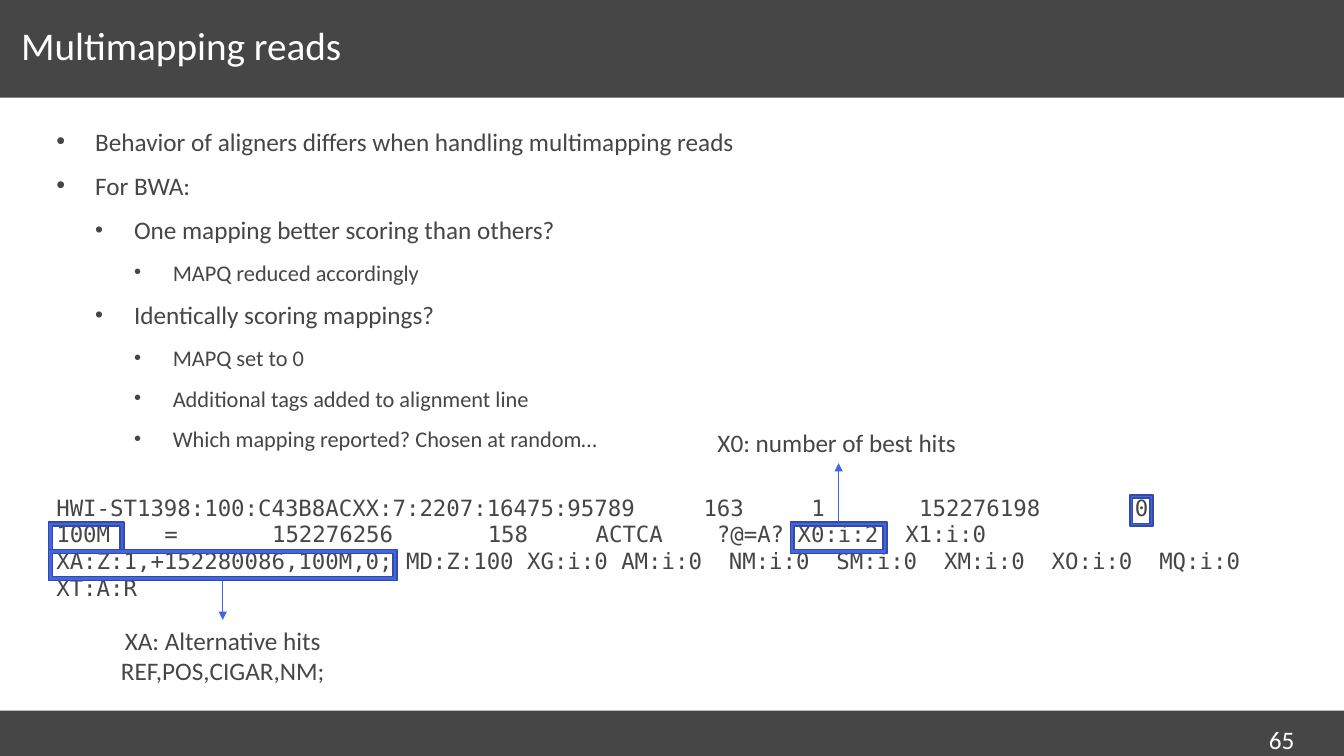
from lxml import etree
from pptx import Presentation
from pptx.dml.color import RGBColor
from pptx.enum.shapes import MSO_CONNECTOR, MSO_SHAPE
from pptx.enum.text import MSO_ANCHOR, PP_ALIGN
from pptx.oxml.ns import qn
from pptx.util import Pt

RECT, FRAME = MSO_SHAPE.RECTANGLE, MSO_SHAPE.FRAME
STRAIGHT = MSO_CONNECTOR.STRAIGHT
LEFT, CENTER = PP_ALIGN.LEFT, PP_ALIGN.CENTER
MIDDLE = MSO_ANCHOR.MIDDLE
GREY = RGBColor(0x46, 0x46, 0x46)
WHITE = RGBColor(0xFF, 0xFF, 0xFF)
BLUE = RGBColor(0x43, 0x65, 0xE2)
DARK_BLUE = RGBColor(0x32, 0x4B, 0xA7)
SANS, MONO = "Calibri", "DejaVu Sans Mono"
TOP, BOTTOM = 0, 2

prs = Presentation()
prs.slide_width, prs.slide_height = Pt(960), Pt(540)
s = prs.slides.add_slide(prs.slide_layouts[5])


def add_run(p, text, size=18, color=GREY, name=SANS):
    r = p.add_run()
    r.text = text
    r.font.color.rgb = color
    for key, value in {"size": Pt(size), "name": name}.items():
        setattr(r.font, key, value)


def add_label(box, lines, align=LEFT, color=GREY):
    sp = s.shapes.add_textbox(*map(Pt, box))
    tf = sp.text_frame
    tf.word_wrap = True
    for i, line in enumerate(lines):
        p = tf.paragraphs[0] if i == 0 else tf.add_paragraph()
        p.alignment = align
        add_run(p, line, color=color)
    return sp


# Header and footer bands, behind the title
for top, height in ((507.6, 32.4), (0, 69.84)):
    sp = s.shapes.add_shape(RECT, 0, Pt(top), prs.slide_width, Pt(height))
    sp.shadow.inherit = False
    sp.fill.solid()
    sp.fill.fore_color.rgb = GREY
    sp.line.fill.background()
    s.shapes._spTree.insert(2, sp._element)

# Title
title = s.shapes.title
for key, value in {"left": 15.12, "top": 12.24, "width": 829.44, "height": 46.08}.items():
    setattr(title, key, Pt(value))
tf = title.text_frame
tf.margin_left = tf.margin_right = 0
tf.vertical_anchor = MIDDLE
p = tf.paragraphs[0]
p.alignment = LEFT
p.line_spacing = 0.8
add_run(p, "Multimapping reads", 28, WHITE)

# Bullets: level and text
BULLETS = [
    (0, "Behavior of aligners differs when handling multimapping reads"),
    (0, "For BWA:"),
    (1, "One mapping better scoring than others?"),
    (2, "MAPQ reduced accordingly"),
    (1, "Identically scoring mappings?"),
    (2, "MAPQ set to 0"),
    (2, "Additional tags added to alignment line"),
    (2, "Which mapping reported? Chosen at random…"),
]
INDENT = 27.72
body = s.shapes.add_textbox(Pt(40.32), Pt(86.4), Pt(878.4), Pt(408.24))
tf = body.text_frame
tf.word_wrap = True
tf.margin_left = tf.margin_right = 0
for i, (level, text) in enumerate(BULLETS):
    p = tf.paragraphs[0] if i == 0 else tf.add_paragraph()
    p.level = level
    p.space_before, p.space_after = Pt(6 if i else 0), Pt(4)
    pPr = p._p.get_or_add_pPr()
    pPr.set("marL", str(Pt(INDENT * (level + 1))))
    pPr.set("indent", str(-Pt(INDENT)))
    clr = etree.SubElement(pPr, qn("a:buClr"))
    etree.SubElement(clr, qn("a:srgbClr"), val=str(GREY))
    etree.SubElement(pPr, qn("a:buSzPct"), val="90000" if level else "100000")
    etree.SubElement(pPr, qn("a:buFont"), typeface="Arial")
    etree.SubElement(pPr, qn("a:buChar"), char="•")
    add_run(p, text, 16 if level == 2 else 18)

# Alignment record, with a tab stop every eight characters
RECORD = (
    "HWI-ST1398:100:C43B8ACXX:7:2207:16475:95789\t163\t1\t152276198\t0\t"
    "100M\t=\t152276256\t158\tACTCA\t ?@=A? X0:i:2  X1:i:0  "
    "XA:Z:1,+152280086,100M,0; MD:Z:100 XG:i:0 AM:i:0  NM:i:0  SM:i:0  "
    "XM:i:0  XO:i:0  MQ:i:0  XT:A:R"
)
TAB = 8 * 9.63
p = tf.add_paragraph()
p.space_before, p.space_after = Pt(25.5), Pt(4)
tabs = etree.SubElement(p._p.get_or_add_pPr(), qn("a:tabLst"))
for n in range(1, 12):
    etree.SubElement(tabs, qn("a:tab"), pos=str(Pt(TAB * n)), algn="l")
add_run(p, RECORD, 16, name=MONO)

# Slide number
add_label((899.28, 514.08, 50.4, 18), ["65"], color=WHITE)

# Frames around the fields
FRAMES = {
    "MAPQ": (807.12, 353.52, 16.56),
    "CIGAR": (34.56, 372.96, 54),
    "X0": (564.48, 372.96, 69.12),
    "XA": (34.56, 392.4, 249.12),
}
frames = {}
for field, (left, top, width) in FRAMES.items():
    sp = s.shapes.add_shape(FRAME, Pt(left), Pt(top), Pt(width), Pt(22.32))
    sp.shadow.inherit = False
    sp.fill.solid()
    sp.fill.fore_color.rgb = BLUE
    sp.line.color.rgb = DARK_BLUE
    sp.line.width = Pt(1)
    frames[field] = sp

# Explanations, joined to their frames by arrows
x0_label = add_label((505.44, 301.68, 187.2, 29.08), ["X0: number of best hits"])
xa_label = add_label((65.52, 442.8, 187.2, 50.9),
                     ["XA: Alternative hits", "REF,POS,CIGAR,NM;"], CENTER)
for field, start, label, end in (("X0", TOP, x0_label, BOTTOM), ("XA", BOTTOM, xa_label, TOP)):
    arrow = s.shapes.add_connector(STRAIGHT, 0, 0, 0, 0)
    arrow.begin_connect(frames[field], start)
    arrow.end_connect(label, end)
    arrow.line.color.rgb = BLUE
    arrow.line.width = Pt(0.5)
    etree.SubElement(arrow.line._get_or_add_ln(), qn("a:tailEnd"), type="triangle")
    etree.SubElement(arrow._element.spPr, qn("a:effectLst"))

prs.save("out.pptx")
